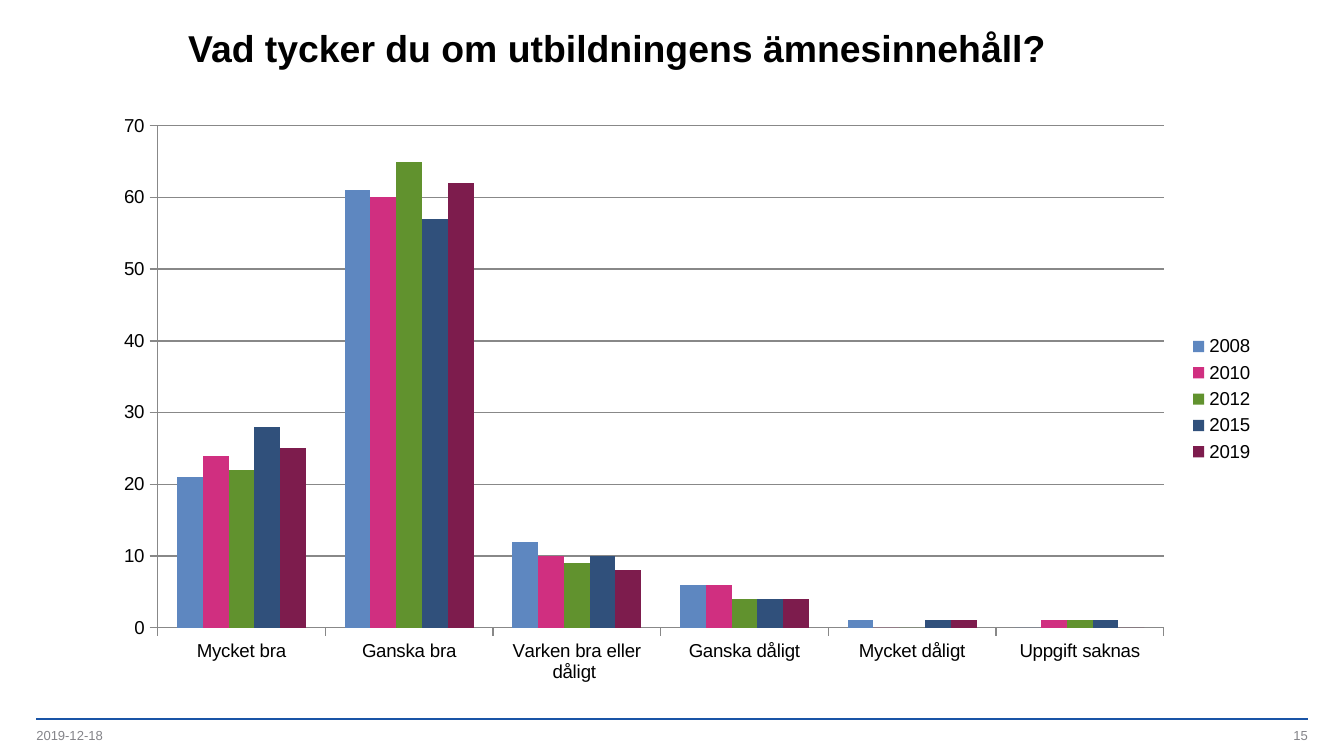
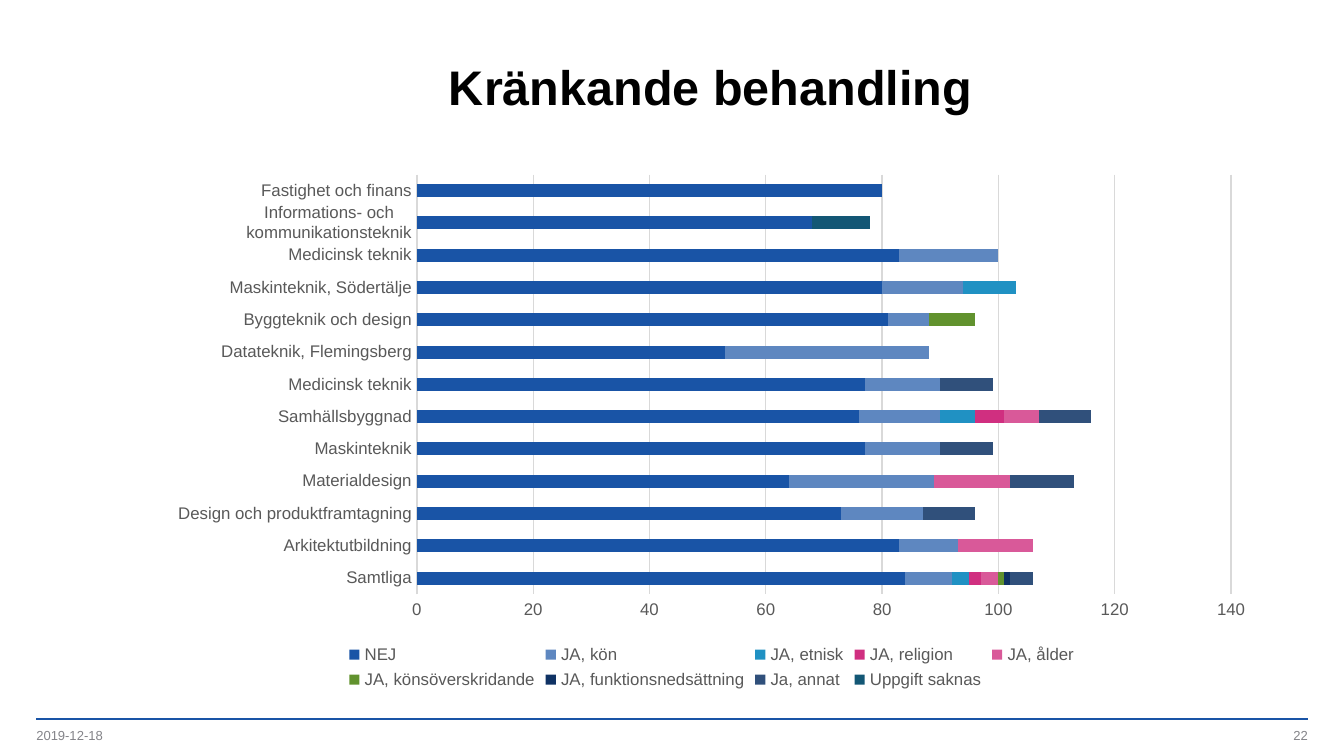
from lxml import etree
from pptx import Presentation
from pptx import util as u
from pptx.chart import data as chart_data
from pptx.dml import color
from pptx.enum import chart as charts, shapes, text
from pptx.oxml import ns

PX = 4572
FONT = "Arial"
BLACK, FOOTER_GREY, AXIS_GREY = "000000", "848489", "888888"
LABEL_GREY, GRID_GREY = "595959", "D9D9D9"
BLUE, LIGHT_BLUE, CYAN, PINK, ROSE = "1954A6", "5E87C0", "2091C3", "D02F80", "D95999"
GREEN, NAVY, SLATE, TEAL, WINE = "61922E", "0F3264", "30507B", "135775", "7D1C4D"
DATE = "2019-12-18"

RATINGS = ["Mycket bra", "Ganska bra", "Varken bra eller dåligt ",
           "Ganska dåligt", "Mycket dåligt", "Uppgift saknas"]
RATING_SERIES = [
    ("2008", LIGHT_BLUE, [21, 61, 12, 6, 1, 0]),
    ("2010", PINK, [24, 60, 10, 6, 0, 1]),
    ("2012", GREEN, [22, 65, 9, 4, 0, 1]),
    ("2015", SLATE, [28, 57, 10, 4, 1, 1]),
    ("2019", WINE, [25, 62, 8, 4, 1, 0]),
]
PROGRAMMES = [
    "Samtliga", "Arkitektutbildning", "Design och produktframtagning",
    "Materialdesign", "Maskinteknik", "Samhällsbyggnad", "Medicinsk teknik",
    "Datateknik, Flemingsberg", "Byggteknik och design",
    "Maskinteknik, Södertälje", "Medicinsk teknik",
    "Informations- och kommunikationsteknik", "Fastighet och finans",
]
TREATMENT_SERIES = [
    ("NEJ", BLUE, [84, 83, 73, 64, 77, 76, 77, 53, 81, 80, 83, 68, 80]),
    ("JA, kön", LIGHT_BLUE, [8, 10, 14, 25, 13, 14, 13, 35, 7, 14, 17, 0, 0]),
    ("JA, etnisk", CYAN, [3, 0, 0, 0, 0, 6, 0, 0, 0, 9, 0, 0, 0]),
    ("JA, religion", PINK, [2, 0, 0, 0, 0, 5, 0, 0, 0, 0, 0, 0, 0]),
    ("JA, ålder", ROSE, [3, 13, 0, 13, 0, 6, 0, 0, 0, 0, 0, 0, 0]),
    ("JA, könsöverskridande", GREEN, [1, 0, 0, 0, 0, 0, 0, 0, 8, 0, 0, 0, 0]),
    ("JA, funktionsnedsättning", NAVY, [1, 0, 0, 0, 0, 0, 0, 0, 0, 0, 0, 0, 0]),
    ("Ja, annat", SLATE, [4, 0, 9, 11, 9, 9, 9, 0, 0, 0, 0, 0, 0]),
    ("Uppgift saknas", TEAL, [0, 0, 0, 0, 0, 0, 0, 0, 0, 0, 0, 10, 0]),
]


def rgb(value):
    return color.RGBColor.from_string(value)


def px(*lengths):
    return [u.Emu(length * PX) for length in lengths]


class Deck:
    def __init__(self):
        self.presentation = Presentation()
        self.presentation.slide_width, self.presentation.slide_height = px(2000, 1125)
        self.slide = None

    def add_slide(self, number):
        layout = self.presentation.slide_layouts[5]
        self.slide = self.presentation.slides.add_slide(layout)
        self.rule(54, 1070, 1946)
        self.footer(54, DATE, text.PP_ALIGN.LEFT)
        self.footer(1496, str(number), text.PP_ALIGN.RIGHT)

    def style_font(self, font, size, hex_color, bold=False):
        font.name, font.size, font.bold = FONT, u.Pt(size), bold
        font.color.rgb = rgb(hex_color)

    def style_line(self, line, hex_color, width=0.75):
        line.color.rgb = rgb(hex_color)
        line.width = u.Pt(width)

    def run(self, paragraph, words, size, hex_color, bold=False):
        run = paragraph.add_run()
        run.text = words
        self.style_font(run.font, size, hex_color, bold)

    def rule(self, left, top, right):
        connector = self.slide.shapes.add_connector(
            shapes.MSO_CONNECTOR.STRAIGHT, *px(left, top, right, top))
        self.style_line(connector.line, BLUE, 1)
        etree.SubElement(connector._element.spPr, ns.qn("a:effectLst"))

    def footer(self, left, words, alignment):
        frame = self.slide.shapes.add_textbox(*px(left, 1082, 450, 26)).text_frame
        frame.word_wrap = True
        frame.vertical_anchor = text.MSO_ANCHOR.MIDDLE
        frame.margin_left = frame.margin_right = 0
        frame.margin_top = frame.margin_bottom = 0
        paragraph = frame.paragraphs[0]
        paragraph.alignment = alignment
        self.run(paragraph, words, 7, FOOTER_GREY)

    def title(self, words, box, size, alignment, line_break=False):
        shape = self.slide.shapes.title
        shape.left, shape.top, shape.width, shape.height = px(*box)
        frame = shape.text_frame
        frame.auto_size = text.MSO_AUTO_SIZE.NONE
        frame.vertical_anchor = text.MSO_ANCHOR.MIDDLE
        paragraph = frame.paragraphs[0]
        paragraph.alignment = alignment
        paragraph.line_spacing = u.Pt(30)
        self.run(paragraph, words, size, BLACK, True)
        if line_break:
            paragraph.add_line_break()

    def chart(self, kind, box, categories, series_rows, size, font_color,
              grid_color, tick, legend_position, overlap=0):
        data = chart_data.CategoryChartData()
        data.categories = categories
        for name, _, values in series_rows:
            data.add_series(name, values)
        chart = self.slide.shapes.add_chart(kind, *px(*box), data).chart
        chart.has_title = False
        self.style_font(chart.font, 10, BLACK)
        chart.has_legend = True
        chart.legend.position = legend_position
        chart.legend.include_in_layout = False
        self.style_font(chart.legend.font, size, font_color)
        plot = chart.plots[0]
        plot.gap_width, plot.overlap = 150, overlap
        plot.vary_by_categories = False
        for series, (_, fill_color, _) in zip(plot.series, series_rows):
            series.format.fill.solid()
            series.format.fill.fore_color.rgb = rgb(fill_color)
        for axis in (chart.category_axis, chart.value_axis):
            axis.major_tick_mark = tick
            axis.minor_tick_mark = charts.XL_TICK_MARK.NONE
            self.style_font(axis.tick_labels.font, size, font_color)
            self.style_line(axis.format.line, grid_color)
        chart.value_axis.has_major_gridlines = True
        self.style_line(chart.value_axis.major_gridlines.format.line, grid_color)
        return chart


def main():
    deck = Deck()

    deck.add_slide(15)
    deck.title("Vad tycker du om utbildningens ämnesinnehåll?",
               (260, 60, 1652, 88), 20, text.PP_ALIGN.LEFT, line_break=True)
    deck.chart(charts.XL_CHART_TYPE.COLUMN_CLUSTERED, (150, 154, 1736, 880),
               RATINGS, RATING_SERIES, 10, BLACK, AXIS_GREY,
               charts.XL_TICK_MARK.OUTSIDE, charts.XL_LEGEND_POSITION.RIGHT)

    deck.add_slide(22)
    deck.title("Kränkande behandling", (232, 56, 1652, 148), 26, text.PP_ALIGN.CENTER)
    treatment = deck.chart(
        charts.XL_CHART_TYPE.BAR_STACKED, (232, 244, 1654, 790),
        PROGRAMMES, TREATMENT_SERIES, 9, LABEL_GREY, GRID_GREY,
        charts.XL_TICK_MARK.NONE, charts.XL_LEGEND_POSITION.BOTTOM, overlap=100)
    treatment.value_axis.format.line.fill.background()

    deck.presentation.save("out.pptx")


if __name__ == "__main__":
    main()
